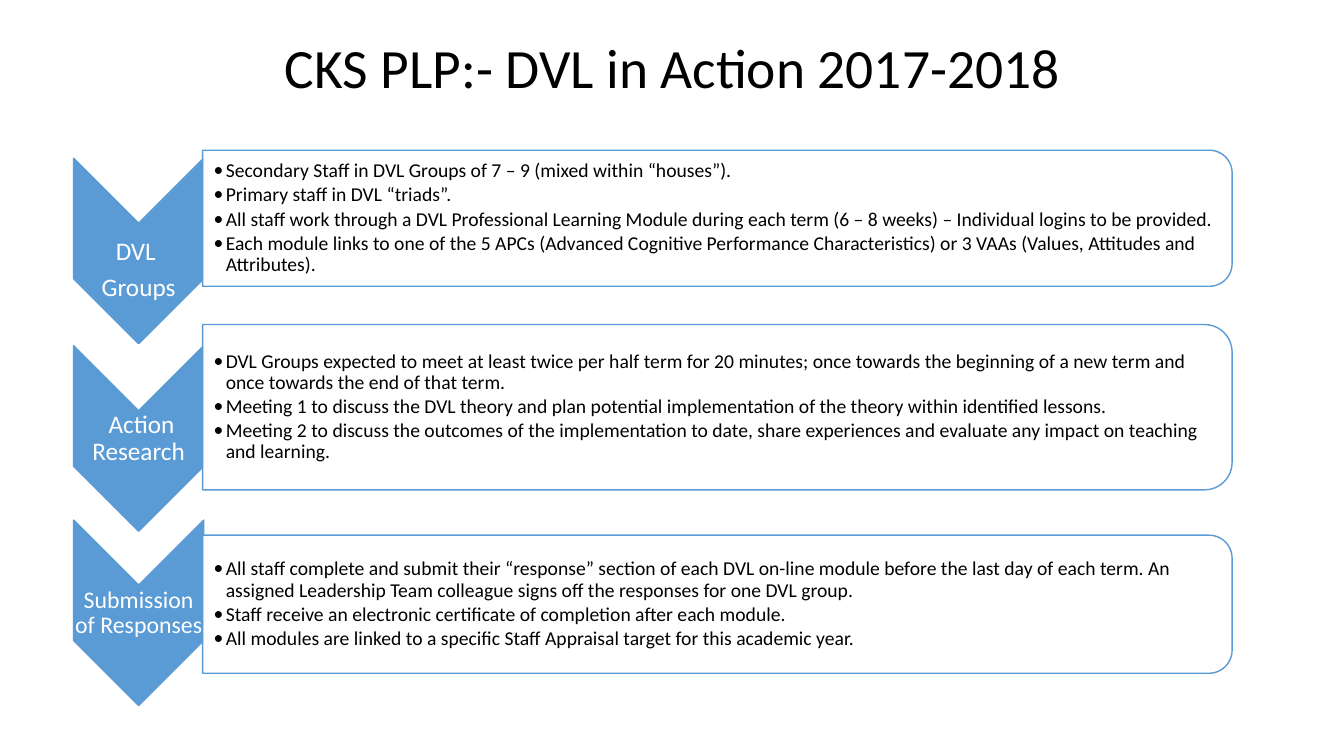
from dataclasses import dataclass

from lxml import etree
from pptx import Presentation
from pptx.dml.color import RGBColor
from pptx.enum.shapes import MSO_SHAPE
from pptx.enum.text import MSO_ANCHOR, PP_ALIGN
from pptx.oxml.ns import qn
from pptx.util import Inches, Pt


@dataclass(frozen=True)
class Theme:
    font: str = "Calibri"
    blue: RGBColor = RGBColor(0x5B, 0x9B, 0xD5)
    white: RGBColor = RGBColor(0xFF, 0xFF, 0xFF)
    black: RGBColor = RGBColor(0, 0, 0)
    title_size: float = 39.6
    body_size: float = 14


theme = Theme()

CHEVRON_LEFT, CHEVRON_WIDTH, CHEVRON_HEIGHT = 0.73, 1.29, 1.84
LABEL_OFFSET, LABEL_HEIGHT = 0.65, 0.55
PANEL_LEFT, PANEL_WIDTH = 2.01, 10.21
BULLET_INDENT = 0.12

# label_drop is the extra top inset that lowers a label inside its chevron.
stages = [
    dict(
        label=["DVL ", "Groups"], label_size=18, label_drop=0.37,
        chevron_top=1.57, panel_top=1.49, panel_height=1.35, text_width=10.15,
        bullets=[
            "Secondary Staff in DVL Groups of 7 – 9 (mixed within “houses”).",
            "Primary staff in DVL “triads”.",
            "All staff work through a DVL Professional Learning Module during each term "
            "(6 – 8 weeks) – Individual logins to be provided.",
            "Each module links to one of the 5 APCs (Advanced Cognitive Performance "
            "Characteristics) or 3 VAAs (Values, Attitudes and Attributes).",
        ],
    ),
    dict(
        label=[" Action Research"], label_size=18, label_drop=0,
        chevron_top=3.43, panel_top=3.22, panel_height=1.64, text_width=10.13,
        bullets=[
            "DVL Groups expected to meet at least twice per half term for 20 minutes; once "
            "towards the beginning of a new term and once towards the end of that term.",
            "Meeting 1 to discuss the DVL theory and plan potential implementation of the "
            "theory within identified lessons.",
            "Meeting 2 to discuss the outcomes of the implementation to date, share "
            "experiences and evaluate any impact on teaching and learning.",
        ],
    ),
    dict(
        label=["Submission of Responses"], label_size=17, label_drop=0,
        chevron_top=5.16, panel_top=5.31, panel_height=1.37, text_width=10.15,
        bullets=[
            "All staff complete and submit their “response” section of each DVL on-line "
            "module before the last day of each term. An assigned Leadership Team "
            "colleague signs off the responses for one DVL group.",
            "Staff receive an electronic certificate of completion after each module.",
            "All modules are linked to a specific Staff Appraisal target for this academic year.",
        ],
    ),
]

presentation = Presentation()
presentation.slide_width = Inches(13.33)
presentation.slide_height = Inches(7.5)
slide = presentation.slides.add_slide(presentation.slide_layouts[6])


def add_turned_shape(kind, left, top, width, height, fill):
    """Add a shape turned 90° clockwise that covers the given box on the slide."""
    shape = slide.shapes.add_shape(
        kind,
        Inches(left + (width - height) / 2), Inches(top + (height - width) / 2),
        Inches(height), Inches(width),
    )
    shape.rotation = 90
    shape.shadow.inherit = False
    shape.fill.solid()
    shape.fill.fore_color.rgb = fill
    shape.line.color.rgb = theme.blue
    shape.line.width = Pt(1)
    return shape


def add_text(lines, box, size, color, insets, space_after=0, bulleted=False):
    """Add a text box with one paragraph per line; insets run left, top, right, bottom."""
    frame = slide.shapes.add_textbox(*map(Inches, box)).text_frame
    frame.word_wrap = True
    frame.vertical_anchor = MSO_ANCHOR.MIDDLE
    (frame.margin_left, frame.margin_top,
     frame.margin_right, frame.margin_bottom) = map(Inches, insets)
    for index, line in enumerate(lines):
        paragraph = frame.add_paragraph() if index else frame.paragraphs[0]
        paragraph.line_spacing = 0.9
        paragraph.space_after = Pt(size * space_after)
        paragraph.alignment = PP_ALIGN.LEFT if bulleted else PP_ALIGN.CENTER
        if bulleted:
            paragraph.level = 1
            properties = paragraph._p.get_or_add_pPr()
            properties.set("marL", str(Inches(BULLET_INDENT)))
            properties.set("indent", str(-Inches(BULLET_INDENT)))
            etree.SubElement(properties, qn("a:buFont")).set("typeface", theme.font)
            etree.SubElement(properties, qn("a:buChar")).set("char", "•")
        run = paragraph.add_run()
        run.text = line
        run.font.name = theme.font
        run.font.size = Pt(size)
        run.font.color.rgb = color


add_text(["CKS PLP:- DVL in Action 2017-2018"], (0.92, 0.4, 11.5, 0.59),
         theme.title_size, theme.black, (0.1, 0.05, 0.1, 0.05))

for stage in stages:
    add_turned_shape(MSO_SHAPE.CHEVRON, CHEVRON_LEFT, stage["chevron_top"],
                     CHEVRON_WIDTH, CHEVRON_HEIGHT, theme.blue)
    add_text(stage["label"],
             (CHEVRON_LEFT, stage["chevron_top"] + LABEL_OFFSET, CHEVRON_WIDTH, LABEL_HEIGHT),
             stage["label_size"], theme.white,
             (0.01, 0.01 + stage["label_drop"], 0.01, 0.01), space_after=0.35)

    panel = add_turned_shape(MSO_SHAPE.ROUND_2_SAME_RECTANGLE, PANEL_LEFT, stage["panel_top"],
                             PANEL_WIDTH, stage["panel_height"], theme.white)
    fill_color = panel._element.spPr.find(qn("a:solidFill")).find(qn("a:srgbClr"))
    etree.SubElement(fill_color, qn("a:alpha")).set("val", "90000")
    text_height = stage["panel_height"] * 0.9
    text_top = stage["panel_top"] + (stage["panel_height"] - text_height) / 2
    add_text(stage["bullets"], (PANEL_LEFT, text_top, stage["text_width"], text_height),
             theme.body_size, theme.black, (0.11, 0.01, 0.01, 0.01),
             space_after=0.15, bulleted=True)

presentation.save("out.pptx")
